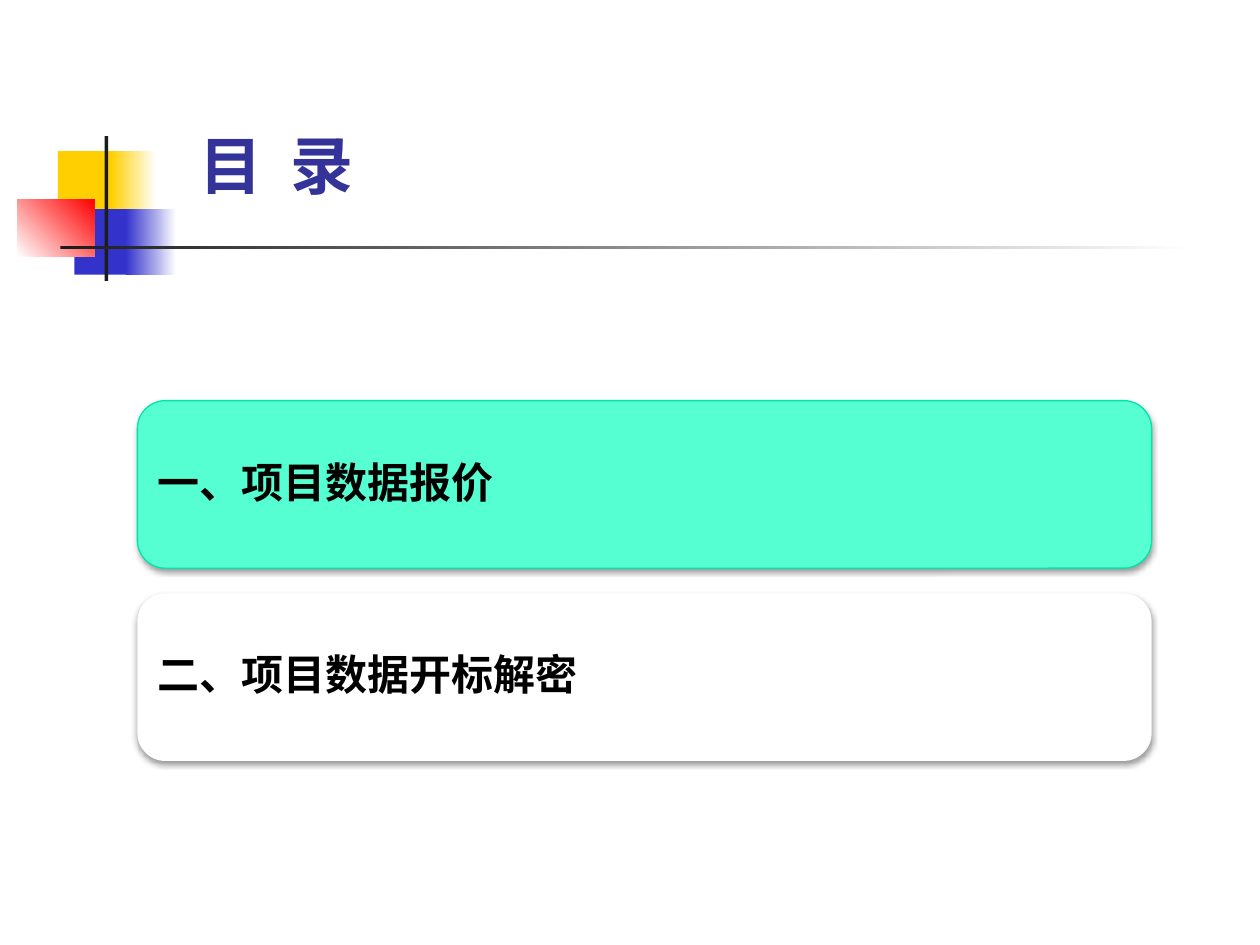
from lxml import etree
from pptx import Presentation
from pptx.dml.color import RGBColor
from pptx.enum.shapes import MSO_SHAPE
from pptx.enum.text import MSO_ANCHOR, PP_ALIGN
from pptx.oxml.ns import qn
from pptx.util import Inches, Pt

RECT, ROUNDED = MSO_SHAPE.RECTANGLE, MSO_SHAPE.ROUNDED_RECTANGLE
MIDDLE, LEFT = MSO_ANCHOR.MIDDLE, PP_ALIGN.LEFT

COLORS = {
    "yellow": "FFCF01", "blue": "3333CC", "red": "FF0000", "ink": "1C1C1C",
    "white": "FFFFFF", "title": "333399", "black": "000000",
    "mint": "56FFD2", "mint_edge": "00E4A8",
}
TITLE_FONT, BODY_FONT = "Noto Sans CJK SC", "Roboto"
AGENDA = [("一、项目数据报价", "mint", "mint_edge"),
          ("二、项目数据开标解密", "white", None)]


def rgb(name):
    """Return the named colour."""
    return RGBColor.from_string(COLORS[name])


def add_block(s, kind, box, fill, fade_to=None, angle=0, line=None):
    """Add a shape with a plain fill or a two-colour fade."""
    sp = s.shapes.add_shape(kind, *map(Inches, box))
    sp.shadow.inherit = False
    if fade_to:
        sp.fill.gradient()
        sp.fill.gradient_angle = angle
        for stop, name in zip(sp.fill.gradient_stops, (fill, fade_to)):
            stop.color.rgb = rgb(name)
    else:
        sp.fill.solid()
        sp.fill.fore_color.rgb = rgb(fill)
    if line:
        sp.line.color.rgb = rgb(line)
        sp.line.width = Pt(0.75)
    else:
        sp.line.fill.background()
    return sp


def add_shadow(sp):
    """Give a shape a soft shadow straight below it."""
    effects = sp._element.spPr.find(qn("a:effectLst"))
    shadow = etree.SubElement(effects, qn("a:outerShdw"), blurRad=str(Pt(3.1)),
                              dist=str(Pt(1.6)), dir="5400000", rotWithShape="0")
    color = etree.SubElement(shadow, qn("a:srgbClr"), val=COLORS["black"])
    etree.SubElement(color, qn("a:alpha"), val="38000")


def format_run(r, font, size, color):
    """Set a bold run's font, size and colour."""
    r.font.name, r.font.size, r.font.bold = font, Pt(size), True
    r.font.color.rgb = rgb(color)


def add_emblem(s, left, top):
    """Draw the overlapping squares with the crossed rules."""
    blocks = [
        (0.32, 0.12, 0.48, 0.52, "yellow", None, 0),
        (0.74, 0.12, 0.36, 0.52, "yellow", "white", 0),
        (0.45, 0.58, 0.46, 0.52, "blue", None, 0),
        (0.86, 0.58, 0.40, 0.52, "blue", "white", 0),
        (0, 0.50, 0.61, 0.46, "white", "red", 45),
        (0.69, 0, 0.03, 1.15, "ink", None, 0),
        (0.34, 0.87, 9, 0.03, "ink", "white", 0),
    ]
    for x, y, w, h, fill, fade_to, angle in blocks:
        add_block(s, RECT, (left + x, top + y, w, h), fill, fade_to, angle)


def add_title(s, left, top, width, height):
    """Fill the title placeholder with spaced-out characters."""
    sp = s.shapes.title
    sp.left, sp.top, sp.width, sp.height = map(Inches, (left, top, width, height))
    tf = sp.text_frame
    tf.text = "目 录"
    tf.vertical_anchor = MIDDLE
    p = tf.paragraphs[0]
    p.alignment = LEFT
    r = p.runs[0]
    format_run(r, TITLE_FONT, 36, "title")
    props = r._r.get_or_add_rPr()
    props.set("spc", "400")
    etree.SubElement(props, qn("a:ea"), typeface=TITLE_FONT)


def add_card(s, left, top, width, height, text, fill, line):
    """Add one rounded agenda card with its label."""
    add_shadow(add_block(s, ROUNDED, (left, top, width, height), fill, line=line))
    pad = 0.065
    label = (left + pad, top + pad, width - 2 * pad, height - 2 * pad)
    tf = s.shapes.add_textbox(*map(Inches, label)).text_frame
    tf.word_wrap = True
    tf.vertical_anchor = MIDDLE
    tf.margin_left = tf.margin_right = tf.margin_top = tf.margin_bottom = Inches(0.1)
    tf.text = text
    p = tf.paragraphs[0]
    p.alignment = LEFT
    p.line_spacing = 0.9
    format_run(p.runs[0], BODY_FONT, 24, "black")


def add_agenda(s, left, top, width, height, gap=0.2):
    """Stack the agenda cards evenly in the given box."""
    row = (height + gap) / len(AGENDA)
    for i, item in enumerate(AGENDA):
        add_card(s, left, top + i * row, width, row - gap, *item)


def main():
    """Build and save the agenda slide."""
    prs = Presentation()
    prs.slide_width, prs.slide_height = Inches(10), Inches(7.5)
    s = prs.slides.add_slide(prs.slide_layouts[5])
    add_emblem(s, 0.14, 1.08)
    add_title(s, 1.48, 0.68, 8.05, 1.25)
    add_agenda(s, 1.09, 3.18, 8.05, 2.86)
    prs.save("out.pptx")


if __name__ == "__main__":
    main()
